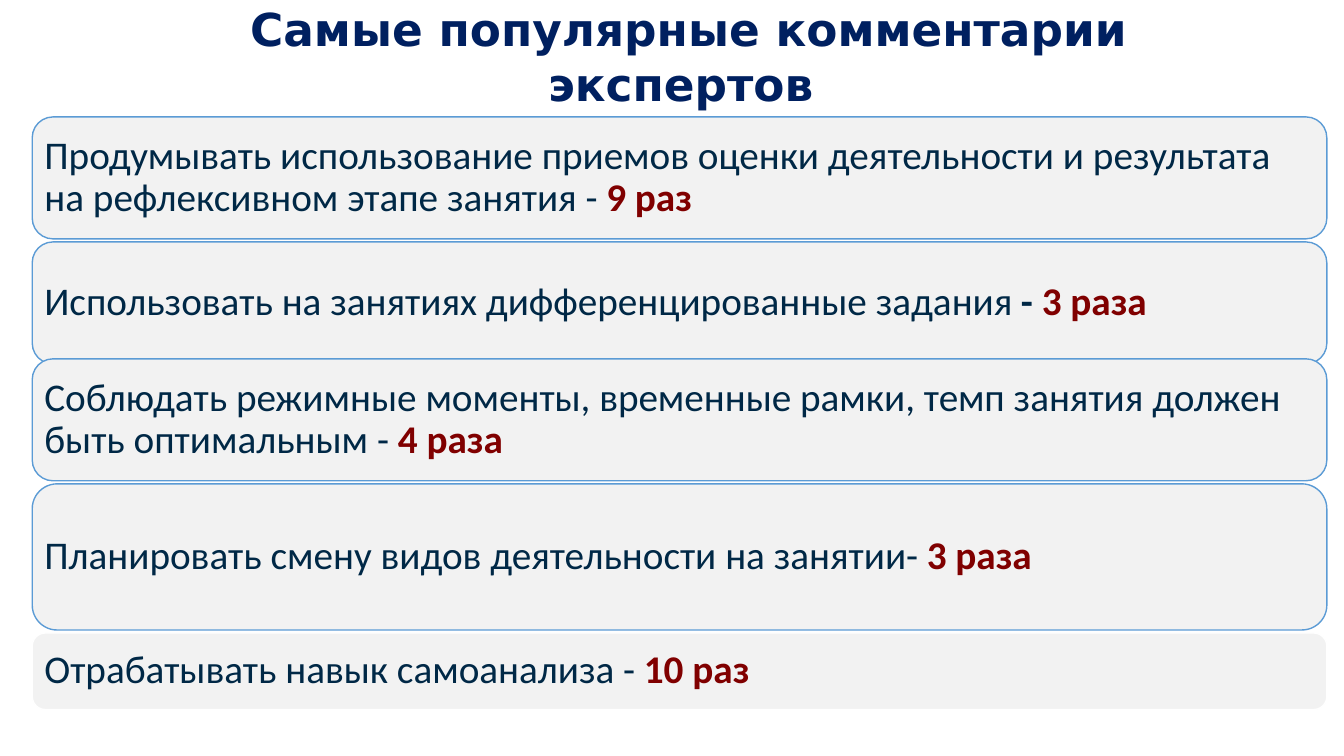
from pptx import Presentation
from pptx.dml.color import RGBColor
from pptx.enum.shapes import MSO_SHAPE as Shape
from pptx.enum.text import MSO_ANCHOR as Anchor, MSO_AUTO_SIZE as AutoSize, PP_ALIGN as Align
from pptx.util import Inches, Pt

NAVY = RGBColor(0x00, 0x20, 0x60)
INK = RGBColor(0x00, 0x28, 0x46)
MAROON = RGBColor(0x80, 0x00, 0x00)
PALE = RGBColor(0xF2, 0xF2, 0xF2)
BLUE = RGBColor(0x5B, 0x9B, 0xD5)
WHITE = RGBColor(0xFF, 0xFF, 0xFF)

WIDTH, HEIGHT = 13.33, 7.5
TEXT_INSET = 0.12
CORNER = 0.17
CORNER_INSET = 0.29 * CORNER

HEADING = "Самые популярные комментарии экспертов "
COMMENTS = [
    (1.16, 1.21, BLUE, [
        ("Продумывать использование приемов оценки деятельности и результата "
         "на рефлексивном этапе занятия - ", INK, False),
        ("9 раз", MAROON, True)]),
    (2.4, 1.21, BLUE, [
        ("Использовать на занятиях дифференцированные задания ", INK, False),
        ("- ", INK, True),
        ("3 раза", MAROON, True)]),
    (3.56, 1.21, BLUE, [
        ("Соблюдать режимные моменты, временные рамки, темп занятия должен "
         "быть оптимальным - ", INK, False),
        ("4 раза", MAROON, True)]),
    (4.8, 1.45, BLUE, [
        ("Планировать смену видов деятельности на занятии- ", INK, False),
        ("3 раза", MAROON, True)]),
    (6.28, 0.76, WHITE, [
        ("Отрабатывать навык самоанализа - ", INK, False),
        ("10 раз", MAROON, True)]),
]


def add_run(paragraph, text, font_name, size, color, bold):
    run = paragraph.add_run()
    run.text = text
    run.font.name = font_name
    run.font.size = Pt(size)
    run.font.color.rgb = color
    run.font.bold = bold


def place_heading(slide, left, top, width, height):
    heading = slide.shapes.title
    heading.left, heading.top = Inches(left), Inches(top)
    heading.width, heading.height = Inches(width), Inches(height)
    frame = heading.text_frame
    frame.word_wrap = True
    frame.auto_size = AutoSize.NONE
    frame.vertical_anchor = Anchor.MIDDLE
    paragraph = frame.paragraphs[0]
    paragraph.alignment = Align.CENTER
    add_run(paragraph, HEADING, "DejaVu Sans", 32.4, NAVY, True)


def place_comment(slide, left, top, width, height, border, phrases):
    card = slide.shapes.add_shape(
        Shape.ROUNDED_RECTANGLE, Inches(left), Inches(top), Inches(width), Inches(height))
    card.adjustments[0] = CORNER
    card.shadow.inherit = False
    card.fill.solid()
    card.fill.fore_color.rgb = PALE
    card.line.color.rgb = border
    card.line.width = Pt(1)
    frame = card.text_frame
    frame.word_wrap = True
    frame.vertical_anchor = Anchor.MIDDLE
    inset = Inches(TEXT_INSET - CORNER_INSET * height)
    frame.margin_left = frame.margin_right = inset
    frame.margin_top = frame.margin_bottom = inset
    paragraph = frame.paragraphs[0]
    paragraph.alignment = Align.LEFT
    paragraph.line_spacing = 0.9
    for text, color, bold in phrases:
        add_run(paragraph, text, "Calibri", 28, color, bold)


def place_comments(slide, left, width):
    for top, height, border, phrases in COMMENTS:
        place_comment(slide, left, top, width, height, border, phrases)


def main():
    deck = Presentation()
    deck.slide_width, deck.slide_height = Inches(WIDTH), Inches(HEIGHT)
    slide = deck.slides.add_slide(deck.slide_layouts[5])
    place_heading(slide, 1.89, 0.18, 9.88, HEIGHT * 0.1)
    place_comments(slide, 0.32, 12.84)
    deck.save("out.pptx")


if __name__ == "__main__":
    main()
